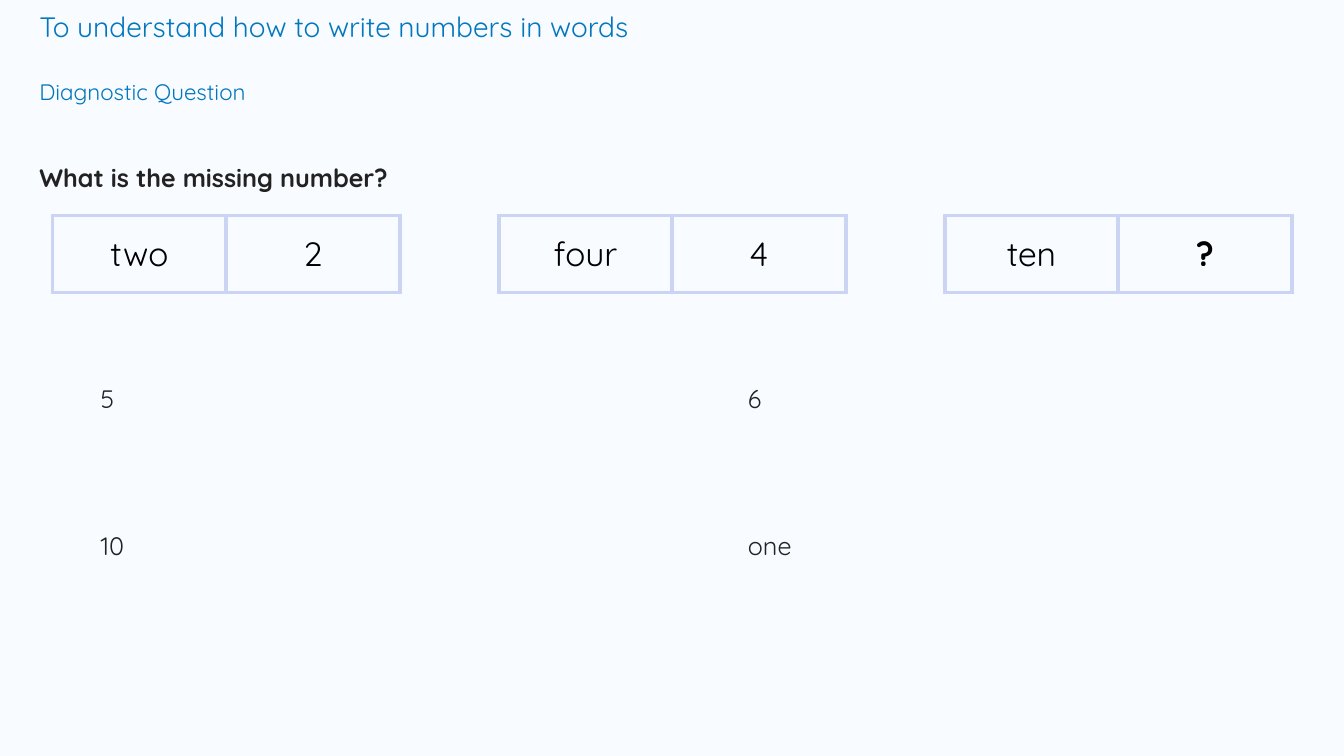
from lxml.etree import SubElement
from pptx import Presentation
from pptx.dml.color import RGBColor
from pptx.enum.text import MSO_ANCHOR as Anchor, PP_ALIGN as Align
from pptx.oxml.ns import qn
from pptx.util import Pt

COLORS = {
    "background": "F8FBFF",
    "heading": "0277BD",
    "body": "222222",
    "cell": "000000",
    "border": "CCD4F4",
}


def write(frame, text, size=18, color="body", bold=False, align=Align.LEFT, spacing=None):
    frame.word_wrap = True
    para = frame.paragraphs[0]
    para.alignment = align
    para.line_spacing = spacing
    span = para.add_run()
    span.text = text
    span.font.name = "Quicksand"
    span.font.size = Pt(size)
    span.font.bold = bold
    span.font.color.rgb = RGBColor.from_string(COLORS[color])


def outline(cell, width):
    """Draw all four borders of a table cell; call before setting its fill."""
    properties = cell._tc.get_or_add_tcPr()
    for side in ("lnL", "lnR", "lnT", "lnB"):
        line = SubElement(properties, qn(f"a:{side}"), w=str(Pt(width)))
        fill = SubElement(line, qn("a:solidFill"))
        SubElement(fill, qn("a:srgbClr"), val=COLORS["border"])


deck = Presentation()
deck.slide_width, deck.slide_height = Pt(960), Pt(540)
page = deck.slides.add_slide(deck.slide_layouts[6])
page.background.fill.solid()
page.background.fill.fore_color.rgb = RGBColor.from_string(COLORS["background"])

# Headings and question
headings = [
    ("To understand how to write numbers in words", 3, 888, 32, dict(size=20, color="heading")),
    ("Diagnostic Question", 52.5, 248, 27, dict(size=16, color="heading")),
    ("What is the missing number?", 101.5, 924, 42, dict(bold=True, spacing=1.5)),
]
for text, top, width, height, style in headings:
    box = page.shapes.add_textbox(Pt(21), Pt(top), Pt(width), Pt(height))
    write(box.text_frame, text, **style)

# Answer choices in a two by two grid
for row, answers in enumerate([("5", "6"), ("10", "one")]):
    for column, answer in enumerate(answers):
        left, top = 64.8 + 462.4 * column, 272.9 + 104.6 * row
        box = page.shapes.add_textbox(Pt(left), Pt(top), Pt(408), Pt(27))
        write(box.text_frame, answer, spacing=0.9)

# Word and number pairs
for index, pair in enumerate([("two", "2"), ("four", "4"), ("ten", "?")]):
    left = 37.6 + 318.6 * index
    table = page.shapes.add_table(1, 2, Pt(left), Pt(154), Pt(248), Pt(55)).table
    table.first_row = table.horz_banding = False
    for cell, text in zip(table.iter_cells(), pair):
        outline(cell, 3)
        cell.fill.background()
        cell.vertical_anchor = Anchor.MIDDLE
        cell.margin_left = cell.margin_right = Pt(7.2)
        cell.margin_top = cell.margin_bottom = Pt(7.2)
        write(cell.text_frame, text, size=24, color="cell", bold=text == "?", align=Align.CENTER)

deck.save("out.pptx")
